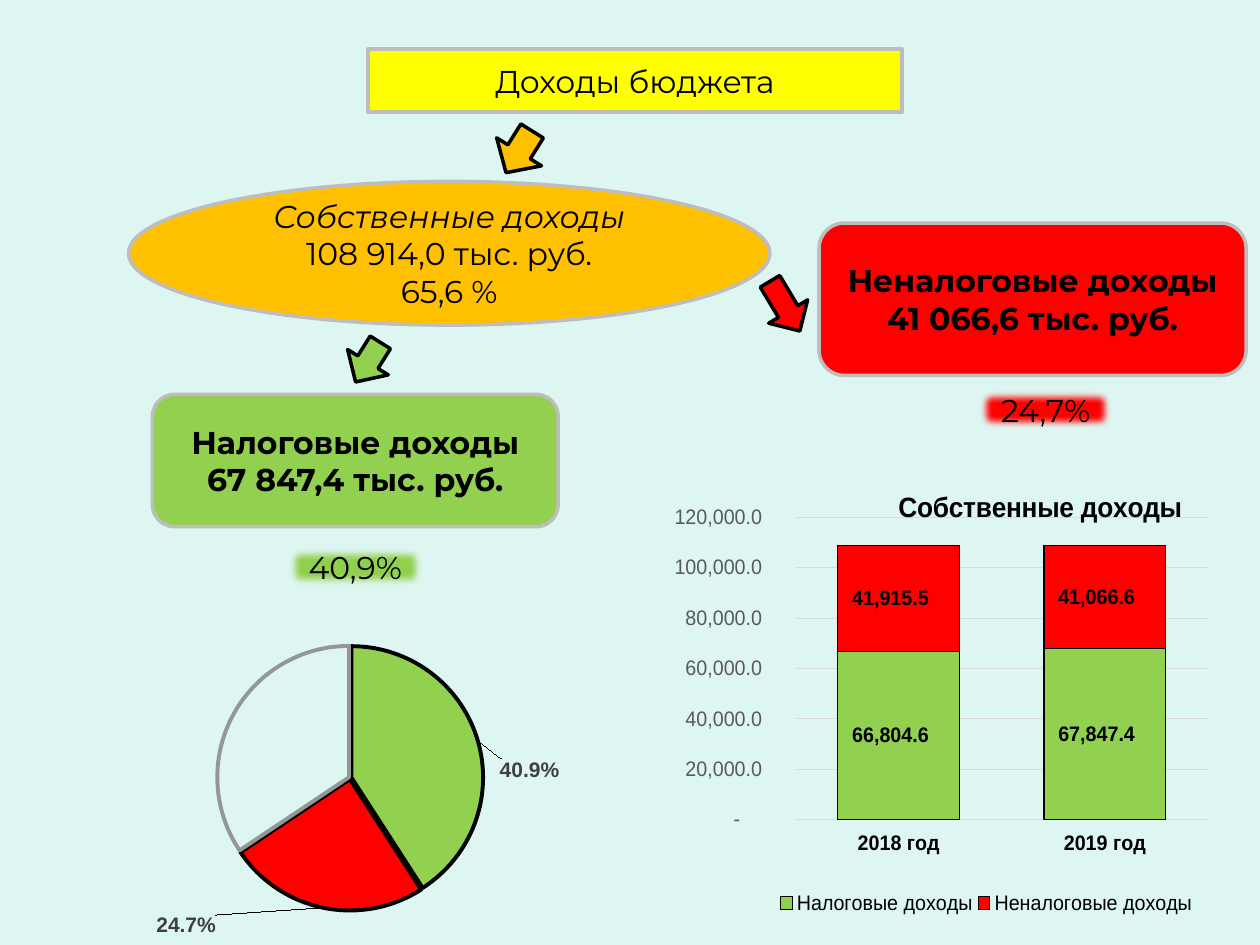
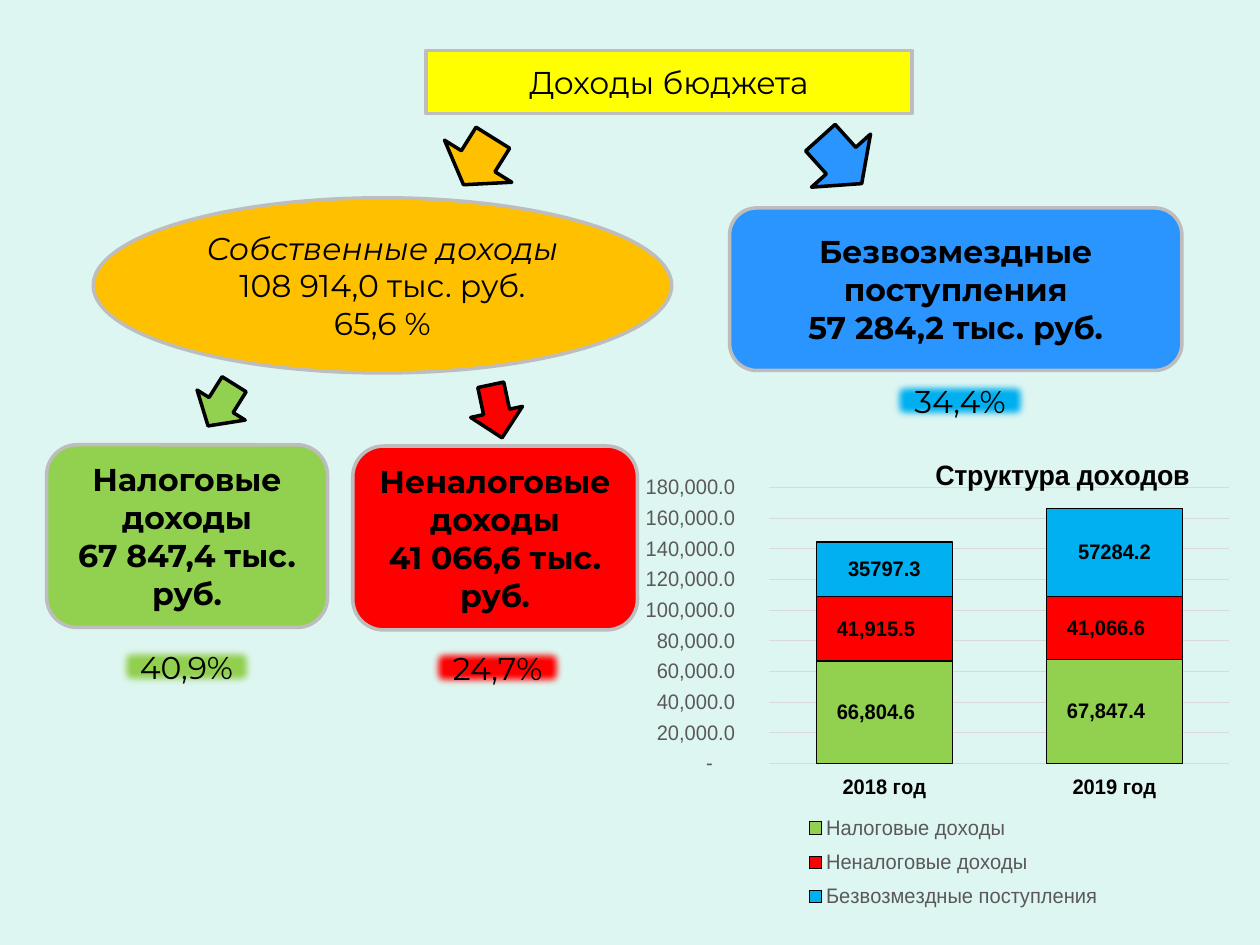
from lxml import etree
from pptx import Presentation
from pptx.chart.data import CategoryChartData
from pptx.dml.color import RGBColor
from pptx.enum.chart import (XL_CHART_TYPE, XL_LABEL_POSITION,
                             XL_LEGEND_POSITION, XL_TICK_MARK)
from pptx.enum.shapes import MSO_SHAPE
from pptx.enum.text import MSO_ANCHOR, MSO_AUTO_SIZE, PP_ALIGN
from pptx.oxml import parse_xml
from pptx.oxml.ns import nsdecls, qn
from pptx.util import Inches, Pt

ROUNDED, OVAL = MSO_SHAPE.ROUNDED_RECTANGLE, MSO_SHAPE.OVAL
RECTANGLE, ARROW = MSO_SHAPE.RECTANGLE, MSO_SHAPE.DOWN_ARROW
STACKED, PIE = XL_CHART_TYPE.COLUMN_STACKED, XL_CHART_TYPE.PIE
BOTTOM, OUTSIDE_END = XL_LEGEND_POSITION.BOTTOM, XL_LABEL_POSITION.OUTSIDE_END
OUTSIDE_TICK = XL_TICK_MARK.OUTSIDE

BACKGROUND, BORDER, BLACK = "DEF6F1", "BDBDBD", "000000"
YELLOW, ORANGE, GREEN, RED = "FFFF00", "FFC000", "92D050", "FF0000"
BLUE, SKY = "2A94FF", "00B0F0"
GRID, AXIS_TEXT, PIE_TEXT, PIE_BORDER = "D9D9D9", "595959", "404040", "969696"

BODY_FONT, CHART_FONT = "Montserrat", "Arial"
AMOUNT_FORMAT = '_-* #,##0.0_р_._-;\\-* #,##0.0_р_._-;_-* "-"??_р_._-;_-@_-'

TITLE = "Доходы бюджета"
OWN = ["Собственные доходы", "108 914,0 тыс. руб.", "65,6 %"]
TAX = ["Налоговые доходы", "67 847,4 тыс. руб."]
NON_TAX = ["Неналоговые доходы", "41 066,6 тыс. руб."]
GRANTS = ["Безвозмездные поступления", "57 284,2 тыс. руб."]

YEARS = ["2018 год", "2019 год"]
TAX_SERIES = ("Налоговые доходы", [66804.6, 67847.4], GREEN, AMOUNT_FORMAT)
NON_TAX_SERIES = ("Неналоговые доходы", [41915.5, 41066.6], RED, AMOUNT_FORMAT)
GRANTS_SERIES = ("Безвозмездные поступления", [35797.3, 57284.2], SKY, "General")

# value, fill, border, label shift as shares of the chart
PIE_SLICES = [
    (0.409, GREEN, BLACK, (0.04, 0.14)),
    (0.247, RED, BLACK, (-0.26, 0)),
    (0.344, None, PIE_BORDER, None),
]

# Places are left, top, width, height in inches; layouts are shares of a chart.
SLIDES = [
    {
        "title": (2.92, 0.39, 4.24, 0.5),
        "boxes": [
            (TAX, GREEN, (1.21, 3.13, 3.22, 1.05)),
            (NON_TAX, RED, (6.5, 1.77, 3.39, 1.21)),
        ],
        "own": (1.02, 1.44, 5.09, 1.14),
        "shares": [
            ("40,9%", GREEN, (2.27, 4.33, 1.1, 0.34)),
            ("24,7%", RED, (7.76, 3.08, 1.08, 0.34)),
        ],
        "arrows": [
            (ORANGE, 32, (3.91, 1.01, 0.42, 0.39)),
            (GREEN, 32, (2.73, 2.69, 0.38, 0.37)),
            (RED, 329, (6.05, 2.2, 0.36, 0.46)),
        ],
        "pie": (1.21, 5.01, 3.23, 2.43),
        "columns": {
            "place": (5.31, 3.77, 4.36, 3.54),
            "title": "Собственные доходы",
            "title_layout": (0.37, 0.02),
            "series": [TAX_SERIES, NON_TAX_SERIES],
            "plot_layout": (0.18, 0.095, 0.8, 0.678),
            "legend_layout": (0.14, 0.93, 0.82, 0.07),
            "legend_color": BLACK,
            "maximum": 120000,
        },
    },
    {
        "title": (3.38, 0.4, 3.86, 0.5),
        "boxes": [
            (TAX, GREEN, (0.37, 3.53, 2.23, 1.45)),
            (NON_TAX, RED, (2.8, 3.54, 2.26, 1.46)),
            (GRANTS, BLUE, (5.79, 1.65, 3.59, 1.29)),
        ],
        "own": (0.74, 1.57, 4.59, 1.39),
        "shares": [
            ("40,9%", GREEN, (0.93, 5.12, 1.1, 0.34)),
            ("24,7%", RED, (3.41, 5.13, 1.08, 0.34)),
            ("34,4%", SKY, (7.07, 3.01, 1.1, 0.34)),
        ],
        "arrows": [
            (ORANGE, 32, (3.48, 1.06, 0.63, 0.44)),
            (BLUE, 318, (6.36, 1.03, 0.63, 0.49)),
            (GREEN, 32, (1.53, 3.02, 0.45, 0.39)),
            (RED, 348, (3.73, 3.05, 0.42, 0.43)),
        ],
        "columns": {
            "place": (5.08, 3.51, 4.77, 3.79),
            "title": "Структура доходов",
            "title_layout": (0.46, 0.02),
            "series": [TAX_SERIES, NON_TAX_SERIES, GRANTS_SERIES],
            "plot_layout": (0.18, 0.095, 0.8, 0.578),
            "legend_layout": (0.2, 0.76, 0.6, 0.25),
            "legend_color": AXIS_TEXT,
            "maximum": 180000,
        },
    },
]


def rgb(value):
    return RGBColor.from_string(value)


def inches(place):
    return [Inches(length) for length in place]


def paint(target, fill, border, width):
    """Set the fill and outline of a shape or of a chart part's format."""
    if fill:
        target.fill.solid()
        target.fill.fore_color.rgb = rgb(fill)
    else:
        target.fill.background()
    target.line.color.rgb = rgb(border)
    target.line.width = Pt(width)


def style_font(font, color=BLACK, size=12, name=CHART_FONT, **flags):
    formats = {"name": name, "size": Pt(size), **flags}
    for attribute, value in formats.items():
        setattr(font, attribute, value)
    font.color.rgb = rgb(color)


def write(shape, lines, bold=False, italic_first=False):
    frame = shape.text_frame
    frame.word_wrap = True
    frame.auto_size = MSO_AUTO_SIZE.NONE
    frame.vertical_anchor = MSO_ANCHOR.MIDDLE
    for index, line in enumerate(lines):
        paragraph = frame.add_paragraph() if index else frame.paragraphs[0]
        paragraph.alignment = PP_ALIGN.CENTER
        run = paragraph.add_run()
        run.text = line
        style_font(run.font, size=18, name=BODY_FONT, bold=bold,
                   italic=italic_first and index == 0)


def add_figure(slide, kind, place, fill, border=BORDER):
    shape = slide.shapes.add_shape(kind, *inches(place))
    shape.shadow.inherit = False
    paint(shape, fill, border, 2)
    return shape


def add_title(slide, place):
    """Turn the title placeholder into a rounded yellow band."""
    title = slide.shapes.title
    title.left, title.top, title.width, title.height = inches(place)
    title._element.spPr.append(parse_xml(
        f'<a:prstGeom {nsdecls("a")} prst="roundRect"><a:avLst/></a:prstGeom>'))
    paint(title, YELLOW, BORDER, 2)
    write(title, [TITLE])


def add_share(slide, text, fill, place):
    """Add a percentage on a strip with soft edges."""
    strip = add_figure(slide, RECTANGLE, place, fill)
    effects = strip._element.spPr.find(qn("a:effectLst"))
    etree.SubElement(effects, qn("a:softEdge"), rad=str(Pt(5)))
    write(strip, [text])


def set_layout(parent, index, shares, inner=False, edge=True):
    """Place a chart part by shares of the chart's width and height."""
    for old in parent.findall(qn("c:layout")):
        parent.remove(old)
    layout = etree.Element(qn("c:layout"))
    manual = etree.SubElement(layout, qn("c:manualLayout"))
    settings = [("layoutTarget", "inner")] if inner else []
    if edge:
        settings += [("xMode", "edge"), ("yMode", "edge")]
    settings += zip("xywh", shares)
    for tag, value in settings:
        etree.SubElement(manual, qn(f"c:{tag}"), val=str(value))
    parent.insert(index, layout)


def add_chart(slide, kind, place, categories, series, number_format, plot_layout):
    data = CategoryChartData(number_format=number_format)
    data.categories = categories
    for name, values in series:
        data.add_series(name, values)
    chart = slide.shapes.add_chart(kind, *inches(place), data).chart
    style_font(chart.font, size=10)
    chart.has_title = chart.has_legend = False
    plot_area = chart._chartSpace.chart.plotArea
    set_layout(plot_area, 0, plot_layout, inner=True)
    return chart


def add_pie(slide, place):
    values = [piece[0] for piece in PIE_SLICES]
    chart = add_chart(slide, PIE, place, ["1", "2", "3"], [("Доли", values)],
                      "0.0%", (0.03, 0.046, 0.912, 0.869))
    series = chart.plots[0].series[0]
    paint(series.format, None, BLACK, 0.75)
    explosion = etree.Element(qn("c:explosion"), val="1")
    series._element.find(qn("c:spPr")).addnext(explosion)
    series.data_labels.show_value = False
    for index, (_, fill, border, shift) in enumerate(PIE_SLICES):
        point = series.points[index]
        paint(point.format, fill, border, 2.25)
        if shift:
            label = point.data_label
            style_font(label.font, PIE_TEXT, bold=True)
            label.position = OUTSIDE_END
            label_element = series._element.find(qn("c:dLbls")).findall(qn("c:dLbl"))[index]
            set_layout(label_element, 1, shift, edge=False)


def add_columns(slide, place, title, title_layout, series, plot_layout,
                legend_layout, legend_color, maximum):
    chart = add_chart(slide, STACKED, place, YEARS, [entry[:2] for entry in series],
                      "General", plot_layout)
    chart.has_title = chart.has_legend = True
    run = chart.chart_title.text_frame.paragraphs[0].add_run()
    run.text = title
    style_font(run.font, size=16, bold=True)
    set_layout(chart.chart_title._element, 1, title_layout)

    chart.legend.position = BOTTOM
    chart.legend.include_in_layout = False
    style_font(chart.legend.font, legend_color)
    set_layout(chart.legend._element, 1, legend_layout)

    plot = chart.plots[0]
    plot.gap_width, plot.overlap, plot.vary_by_categories = 69, 100, False
    for column, (_, _, fill, number_format) in zip(plot.series, series):
        paint(column.format, fill, BLACK, 0.75)
        labels = column.data_labels
        labels.show_value = True
        labels.number_format = number_format
        labels.number_format_is_linked = False
        style_font(labels.font, bold=True)

    years, amounts = chart.category_axis, chart.value_axis
    for axis in (years, amounts):
        axis.major_tick_mark = OUTSIDE_TICK
        axis.format.line.fill.background()
    style_font(years.tick_labels.font, bold=True)
    style_font(amounts.tick_labels.font, AXIS_TEXT)
    amounts.tick_labels.number_format = AMOUNT_FORMAT
    amounts.tick_labels.number_format_is_linked = False
    amounts.minimum_scale, amounts.maximum_scale = 0, maximum
    amounts.major_unit = 20000
    grid_line = amounts.major_gridlines.format.line
    grid_line.color.rgb, grid_line.width = rgb(GRID), Pt(0.75)


def build_slide(presentation, content):
    slide = presentation.slides.add_slide(presentation.slide_layouts[5])
    add_title(slide, content["title"])
    for lines, fill, place in content["boxes"]:
        write(add_figure(slide, ROUNDED, place, fill), lines, bold=True)
    write(add_figure(slide, OVAL, content["own"], ORANGE), OWN, italic_first=True)
    for share in content["shares"]:
        add_share(slide, *share)
    for fill, rotation, place in content["arrows"]:
        add_figure(slide, ARROW, place, fill, BLACK).rotation = rotation
    if "pie" in content:
        add_pie(slide, content["pie"])
    add_columns(slide, **content["columns"])


def main():
    presentation = Presentation()
    presentation.slide_width, presentation.slide_height = inches((10, 7.5))
    background = presentation.slide_master.background.fill
    background.solid()
    background.fore_color.rgb = rgb(BACKGROUND)
    for content in SLIDES:
        build_slide(presentation, content)
    presentation.save("out.pptx")


if __name__ == "__main__":
    main()
